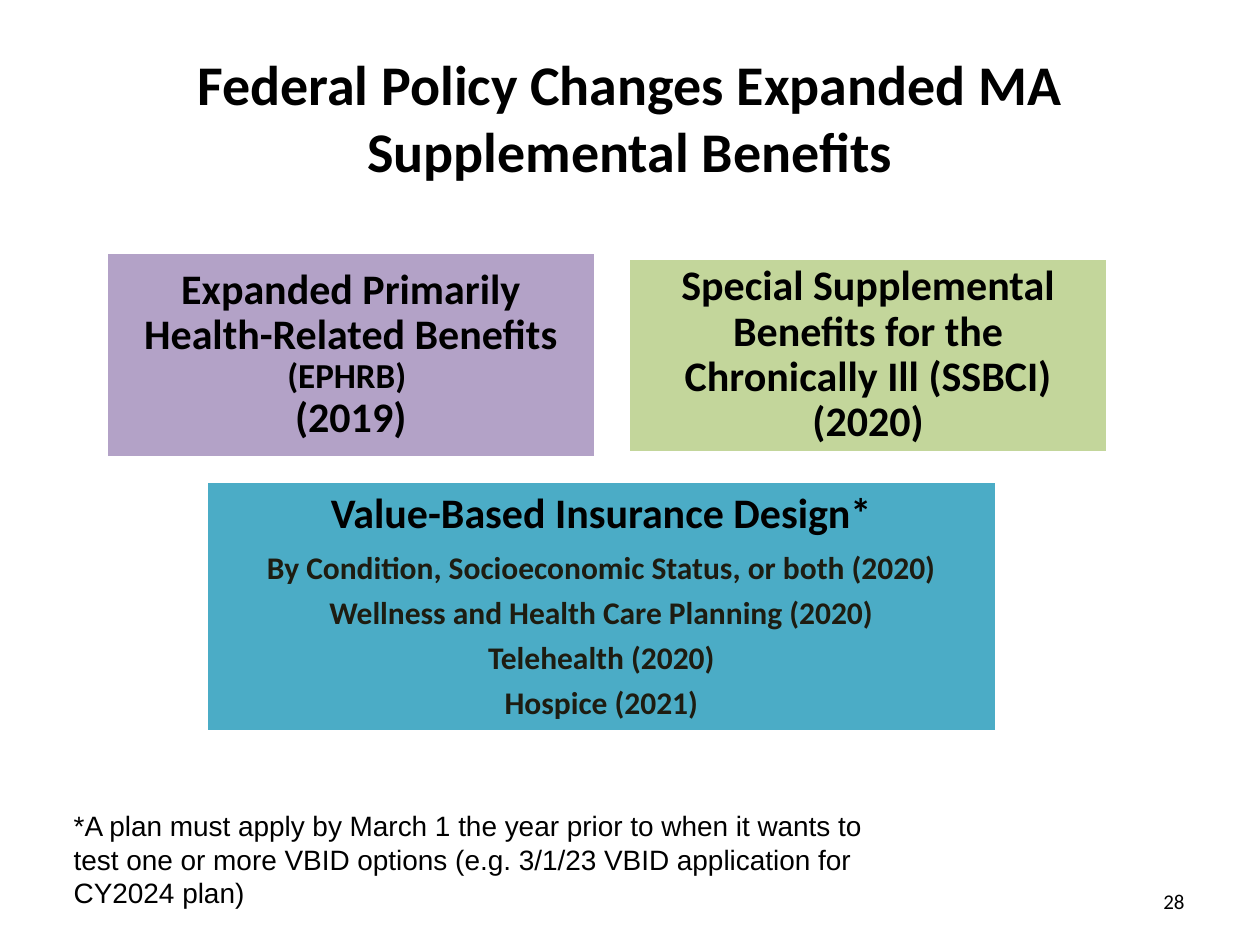
import pptx
import pptx.dml.color
import pptx.enum.shapes
import pptx.enum.text
import pptx.util

Pt = pptx.util.Pt
ALIGN = pptx.enum.text.PP_ALIGN
ANCHOR = pptx.enum.text.MSO_ANCHOR

# Content: each paragraph is a list of (text, size name) runs; None is a line break
TITLE = "Federal Policy Changes Expanded MA Supplemental Benefits"
BOXES = [
    {"frame": (60.5, 144, 280, 117.4), "fill": "purple", "paragraphs": [
        [("Expanded Primarily Health-Related Benefits ", "heading"),
         ("(EPHRB) ", "subheading"), None, ("(2019)", "heading")]]},
    {"frame": (359.3, 147.6, 273.6, 110.9), "fill": "green", "paragraphs": [
        [("Special Supplemental Benefits for the Chronically Ill (SSBCI) (2020)", "heading")]]},
    {"frame": (118, 275, 451.4, 143.3), "fill": "blue", "paragraphs": [
        [("Value-Based Insurance Design*", "heading")],
        [("By Condition, Socioeconomic Status, or both (2020)", "item")],
        [("Wellness and Health Care Planning (2020)", "item")],
        [("Telehealth (2020)", "item")],
        [("Hospice (2021)", "item")]]},
]
FOOTNOTE = ("*A plan must apply by March 1 the year prior to when it wants to test one or more "
            "VBID options (e.g. 3/1/23 VBID application for CY2024 plan)")
SLIDE_NUMBER = "28"

THEME = {
    "colors": {"text": "000000", "item": "1E1C11", "outline": "FFFFFF",
               "purple": "B3A2C7", "green": "C3D69B", "blue": "4BACC6"},
    "sizes": {"title": 32, "heading": 24, "subheading": 20, "item": 18,
              "footnote": 16, "number": 12},
    "font": "Calibri",
    "footnote_font": "Arial",
}


def color(name):
    return pptx.dml.color.RGBColor.from_string(THEME["colors"][name])


def format_font(font, size, bold=False, face=THEME["font"]):
    font.name = face
    font.size = Pt(THEME["sizes"][size])
    font.bold = bold
    font.color.rgb = color("item" if size == "item" else "text")


def add_box(slide, box):
    shape = slide.shapes.add_shape(pptx.enum.shapes.MSO_SHAPE.RECTANGLE, *map(Pt, box["frame"]))
    shape.shadow.inherit = False
    shape.fill.solid()
    shape.fill.fore_color.rgb = color(box["fill"])
    shape.line.color.rgb = color("outline")
    shape.line.width = Pt(2)
    frame = shape.text_frame
    frame.word_wrap = True
    frame.vertical_anchor = ANCHOR.MIDDLE
    frame.margin_left = frame.margin_right = frame.margin_top = frame.margin_bottom = Pt(7.2)
    for index, pieces in enumerate(box["paragraphs"]):
        paragraph = frame.add_paragraph() if index else frame.paragraphs[0]
        paragraph.alignment = ALIGN.CENTER
        paragraph.line_spacing = 0.9
        # Space after is 35% of the type size
        paragraph.space_after = Pt(0.35 * THEME["sizes"][pieces[0][1]])
        for piece in pieces:
            if piece is None:
                paragraph.add_line_break()
                continue
            run = paragraph.add_run()
            run.text, size = piece
            format_font(run.font, size, bold=True)


def add_label(slide, text, frame, size, face=THEME["font"], alignment=ALIGN.LEFT, anchor=ANCHOR.TOP):
    text_frame = slide.shapes.add_textbox(*map(Pt, frame)).text_frame
    text_frame.word_wrap = True
    text_frame.vertical_anchor = anchor
    text_frame.text = text
    paragraph = text_frame.paragraphs[0]
    paragraph.alignment = alignment
    format_font(paragraph.runs[0].font, size, face=face)


def main():
    presentation = pptx.Presentation()
    presentation.slide_width, presentation.slide_height = Pt(720), Pt(540)
    slide = presentation.slides.add_slide(presentation.slide_layouts[5])

    # Title
    title = slide.shapes.title
    title.left, title.top, title.width, title.height = map(Pt, (36, 21.6, 648, 90))
    title.text_frame.text = TITLE
    title.text_frame.vertical_anchor = ANCHOR.MIDDLE
    paragraph = title.text_frame.paragraphs[0]
    paragraph.alignment = ALIGN.CENTER
    format_font(paragraph.runs[0].font, "title", bold=True)

    # Benefit boxes
    for box in BOXES:
        add_box(slide, box)

    # Footnote and slide number
    add_label(slide, FOOTNOTE, (35, 458.6, 468.7, 65.5), "footnote", THEME["footnote_font"])
    add_label(slide, SLIDE_NUMBER, (516, 500.4, 168, 28.8), "number",
              alignment=ALIGN.RIGHT, anchor=ANCHOR.MIDDLE)

    presentation.save("out.pptx")


if __name__ == "__main__":
    main()
